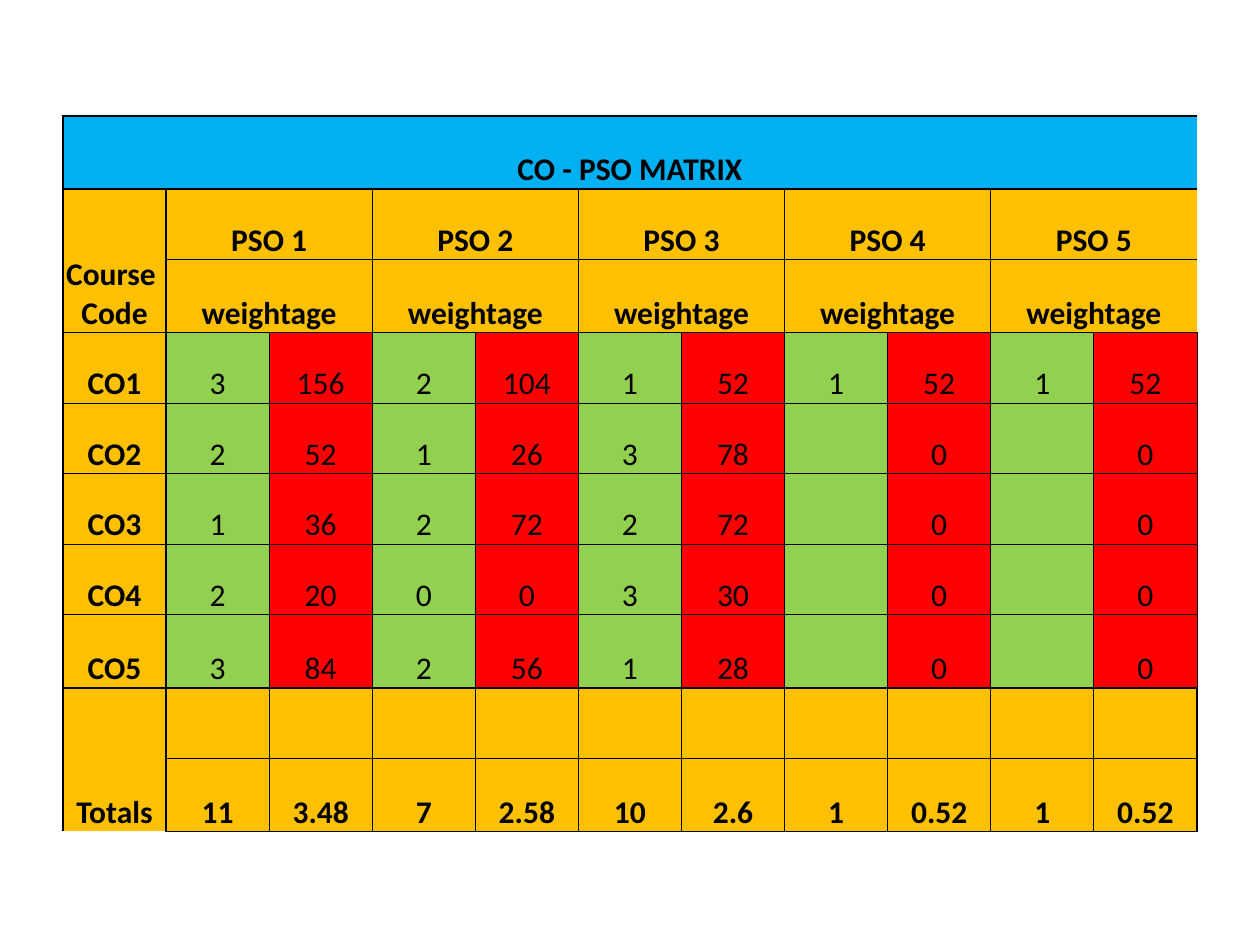
"""Build the CO - PSO matrix slide."""
import lxml.etree
import pptx
import pptx.dml.color
import pptx.enum.text
import pptx.oxml.ns
import pptx.util

Inches = pptx.util.Inches
COLORS = {"title": "00B0F0", "label": "FFC000", "level": "92D050", "score": "FF0000", "ink": "000000"}
NO_STYLE = "{2D5ABB26-0587-4C30-8999-92F81FD0307C}"


def write(cell, text, size=18, bold=False, font="Calibri", color="ink"):
    cell.vertical_anchor = pptx.enum.text.MSO_ANCHOR.BOTTOM
    cell.margin_left = cell.margin_right = cell.margin_top = Inches(0.01)
    cell.margin_bottom = 0
    para = cell.text_frame.paragraphs[0]
    para.alignment = pptx.enum.text.PP_ALIGN.CENTER
    para.text = text
    for span in para.runs:
        span.font.name = font
        span.font.size = pptx.util.Pt(size)
        span.font.bold = bold
        span.font.color.rgb = pptx.dml.color.RGBColor.from_string(COLORS[color])


def add_border(cell, side, points):
    tag = pptx.oxml.ns.qn
    line = lxml.etree.SubElement(cell._tc.get_or_add_tcPr(), tag(f"a:ln{side}"), w=str(pptx.util.Pt(points)))
    fill = lxml.etree.SubElement(line, tag("a:solidFill"))
    lxml.etree.SubElement(fill, tag("a:srgbClr"), val=COLORS["ink"])


rows = [
    ["CO - PSO MATRIX"] + [""] * 10,
    ["Course \nCode", "PSO 1", "", "PSO 2", "", "PSO 3", "", "PSO 4", "", "PSO 5", ""],
    [""] + ["weightage", ""] * 5,
    ["CO1", "3", "156", "2", "104", "1", "52", "1", "52", "1", "52"],
    ["CO2", "2", "52", "1", "26", "3", "78", "", "0", "", "0"],
    ["CO3", "1", "36", "2", "72", "2", "72", "", "0", "", "0"],
    ["CO4", "2", "20", "0", "0", "3", "30", "", "0", "", "0"],
    ["CO5", "3", "84", "2", "56", "1", "28", "", "0", "", "0"],
    ["Totals"] + [""] * 10,
    ["", "11", "3.48", "7", "2.58", "10", "2.6", "1", "0.52", "1", "0.52"],
]
heights = [0.58, 0.56, 0.58, 0.56, 0.56, 0.56, 0.56, 0.58, 0.56, 0.58]
body_rows = range(3, 8)
heavy_rows = {0, 1, 3, 8, 10}
spans = {(0, 0): (1, 11), (1, 0): (2, 1), (8, 0): (2, 1)}
spans.update({(row, column): (1, 2) for row in (1, 2) for column in range(1, 11, 2)})

deck = pptx.Presentation()
deck.slide_width, deck.slide_height = Inches(10), Inches(7.5)
page = deck.slides.add_slide(deck.slide_layouts[6])
frame = page.shapes.add_table(len(rows), 11, Inches(0.5), Inches(0.92), Inches(9), Inches(sum(heights)))
matrix = frame.table
matrix.first_row = matrix.horz_banding = False
matrix._tbl.tblPr.find(pptx.oxml.ns.qn("a:tableStyleId")).text = NO_STYLE
for column in matrix.columns:
    column.width = Inches(9 / 11)
for row, height in zip(matrix.rows, heights):
    row.height = Inches(height)
for (top, left), (down, across) in spans.items():
    matrix.cell(top, left).merge(matrix.cell(top + down - 1, left + across - 1))

for top, texts in enumerate(rows):
    for left, text in enumerate(texts):
        cell = matrix.cell(top, left)
        if cell.is_spanned:
            continue
        in_body = top in body_rows and left > 0
        heavy_columns = {0, 1} if in_body else {0, 1, 11}
        if in_body:
            fill = "level" if left % 2 else "score"
        else:
            fill = "label" if top else "title"
        write(cell, text, bold=not in_body)
        down, across = spans.get((top, left), (1, 1))
        bottom, right = top + down, left + across
        for row in range(top, bottom):
            for column in range(left, right):
                part = matrix.cell(row, column)
                if column == left:
                    add_border(part, "L", 1 if left in heavy_columns else 0.5)
                if column == right - 1:
                    add_border(part, "R", 1 if right in heavy_columns else 0.5)
                if row == top:
                    add_border(part, "T", 1 if top in heavy_rows else 0.5)
                if row == bottom - 1:
                    add_border(part, "B", 1 if bottom in heavy_rows else 0.5)
                part.fill.solid()
                part.fill.fore_color.rgb = pptx.dml.color.RGBColor.from_string(COLORS[fill])

deck.save("out.pptx")
